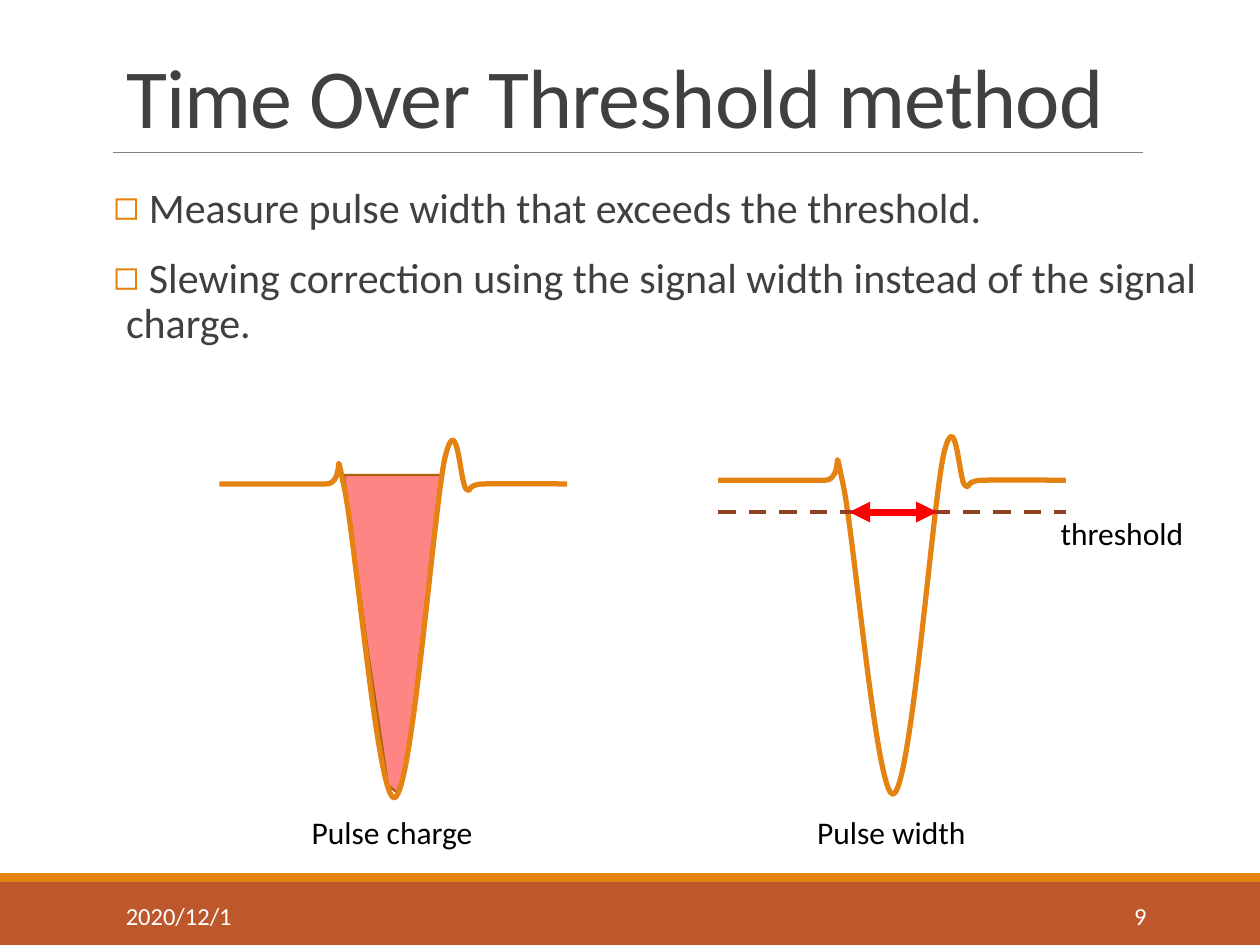
"""Build a slide that explains the time over threshold method."""
from lxml import etree
from pptx import Presentation
from pptx.dml.color import RGBColor
from pptx.enum.dml import MSO_LINE
from pptx.enum.shapes import MSO_CONNECTOR, MSO_SHAPE
from pptx.enum.text import MSO_ANCHOR, MSO_AUTO_SIZE, PP_ALIGN
from pptx.oxml.ns import qn
from pptx.util import Pt

STRAIGHT = MSO_CONNECTOR.STRAIGHT
RECTANGLE = MSO_SHAPE.RECTANGLE
DASH = MSO_LINE.DASH
TOP, MIDDLE, BOTTOM = MSO_ANCHOR.TOP, MSO_ANCHOR.MIDDLE, MSO_ANCHOR.BOTTOM
LEFT, RIGHT = PP_ALIGN.LEFT, PP_ALIGN.RIGHT
NO_FIT, GROW = MSO_AUTO_SIZE.NONE, MSO_AUTO_SIZE.SHAPE_TO_FIT_TEXT

ORANGE = RGBColor(0xE4, 0x83, 0x12)
RUST = RGBColor(0xBD, 0x58, 0x2C)
BROWN = RGBColor(0x8E, 0x42, 0x21)
OUTLINE = RGBColor(0xA9, 0x61, 0x0D)
RED = RGBColor(0xFF, 0x00, 0x00)
GRAY = RGBColor(0x80, 0x80, 0x80)
DARK = RGBColor(0x40, 0x40, 0x40)
BLACK = RGBColor(0x00, 0x00, 0x00)
WHITE = RGBColor(0xFF, 0xFF, 0xFF)

FONT = "Calibri"
BULLETS = (
    " Measure pulse width that exceeds the threshold.",
    " Slewing correction using the signal width instead of the signal charge.",
)
PULSE_WIDTH, PULSE_HEIGHT, PULSE_BASELINE = 198.7, 204.5, 24.6
PULSE_SEGMENTS = (
    ("a:moveTo", (0, 0)),
    ("a:lnTo", (60.5, 0)),
    ("a:cubicBezTo", (72.7, 0.7), (64.8, -28), (71.3, 1.8)),
    ("a:cubicBezTo", (77.8, 31.7), (90.7, 182.2), (100.1, 179.3)),
    ("a:cubicBezTo", (110.2, 176.4), (122.4, 14.4), (128.9, -15.1)),
    ("a:cubicBezTo", (136.1, -44.6), (137.5, 0.7), (141.1, 2.9)),
    ("a:cubicBezTo", (144.7, 5.4), (140.4, 0.4), (150.5, 0)),
    ("a:cubicBezTo", (159.8, -0.4), (198.7, 0), (198.7, 0)),
    ("a:lnTo", (198.7, 0)),
)
CHARGE_AREA = ((196.6, 271.4), (252, 271.4), (232.6, 437), (226.8, 452.9),
               (226.8, 452.9), (221.8, 448.6), (210.2, 371.5))


def apply(target, values):
    """Set each attribute of the target from a dict."""
    for name, value in values.items():
        setattr(target, name, value)


def format_line(line, color, width):
    """Give a line its colour and width."""
    line.color.rgb = color
    line.width = Pt(width)


def format_run(run, size, color):
    """Give a run its font, size and colour."""
    apply(run.font, {"name": FONT, "size": Pt(size)})
    run.font.color.rgb = color


def add_bar(slide, top, height, color):
    """Add a filled bar across the slide."""
    shape = slide.shapes.add_shape(RECTANGLE, 0, Pt(top), Pt(720), Pt(height))
    shape.shadow.inherit = False
    shape.fill.solid()
    shape.fill.fore_color.rgb = color
    shape.line.fill.background()


def add_line(slide, left, right, height, color, width):
    """Add a level line and return it."""
    connector = slide.shapes.add_connector(
        STRAIGHT, Pt(left), Pt(height), Pt(right), Pt(height))
    format_line(connector.line, color, width)
    etree.SubElement(connector.element.spPr, qn("a:effectLst"))
    return connector


def add_arrow_heads(connector):
    """Put a triangle on both ends of a connector."""
    line = connector.element.spPr.find(qn("a:ln"))
    for tag in ("a:headEnd", "a:tailEnd"):
        etree.SubElement(line, qn(tag), type="triangle")


def add_outline(slide, points, color, width, close=False):
    """Add an unfilled freeform through the points and return it."""
    start, *others = [(Pt(x), Pt(y)) for x, y in points]
    builder = slide.shapes.build_freeform(*start)
    builder.add_line_segments(others, close=close)
    shape = builder.convert_to_shape()
    shape.shadow.inherit = False
    shape.fill.background()
    format_line(shape.line, color, width)
    return shape


def add_pulse(slide, left, baseline):
    """Add the pulse as a freeform with curved segments."""
    top = baseline - PULSE_BASELINE
    corners = ((left, top), (left + PULSE_WIDTH, top + PULSE_HEIGHT))
    shape = add_outline(slide, corners, ORANGE, 3)
    outline = next(shape.element.iter(qn("a:path")))
    for segment in list(outline):
        outline.remove(segment)
    for tag, *points in PULSE_SEGMENTS:
        segment = etree.SubElement(outline, qn(tag))
        for x, y in points:
            etree.SubElement(segment, qn("a:pt"), x=str(Pt(x)),
                             y=str(Pt(y + PULSE_BASELINE)))


def add_charge_area(slide):
    """Add the translucent area that stands for the pulse charge."""
    shape = add_outline(slide, CHARGE_AREA, OUTLINE, 1.25, close=True)
    shape.fill.solid()
    shape.fill.fore_color.rgb = RED
    color = shape.element.spPr.find(qn("a:solidFill"))[0]
    etree.SubElement(color, qn("a:alpha"), val="48000")


def add_text(slide, box, text, size, color, alignment=LEFT, **frame_values):
    """Add a text box with one paragraph."""
    frame = slide.shapes.add_textbox(*map(Pt, box)).text_frame
    apply(frame, {"word_wrap": True, "auto_size": NO_FIT,
                  "vertical_anchor": TOP, **frame_values})
    paragraph = frame.paragraphs[0]
    paragraph.alignment = alignment
    run = paragraph.add_run()
    run.text = text
    format_run(run, size, color)


def add_title(slide, text):
    """Place and format the title placeholder."""
    title = slide.shapes.title
    apply(title, {"left": Pt(64.8), "top": Pt(22.7),
                  "width": Pt(594), "height": Pt(64.1)})
    apply(title.text_frame, {"text": text, "word_wrap": True,
                             "auto_size": NO_FIT, "vertical_anchor": BOTTOM})
    paragraph = title.text_frame.paragraphs[0]
    apply(paragraph, {"alignment": LEFT, "line_spacing": 0.85})
    run = paragraph.runs[0]
    format_run(run, 48, DARK)
    run.font._element.set("spc", "-48")


def add_bullets(slide, texts):
    """Add the bulleted text."""
    box = slide.shapes.add_textbox(Pt(64.8), Pt(103.4), Pt(620.6), Pt(362.2))
    frame = box.text_frame
    apply(frame, {"word_wrap": True, "auto_size": NO_FIT,
                  "margin_left": 0, "margin_right": 0})
    for index, text in enumerate(texts):
        paragraph = frame.add_paragraph() if index else frame.paragraphs[0]
        apply(paragraph, {"line_spacing": 0.9, "space_before": Pt(12),
                          "space_after": Pt(2)})
        run = paragraph.add_run()
        run.text = text
        format_run(run, 24, DARK)
        properties = paragraph._p.get_or_add_pPr()
        properties.set("marL", str(Pt(7.2)))
        properties.set("indent", str(Pt(-7.2)))
        bullet_color = etree.SubElement(properties, qn("a:buClr"))
        etree.SubElement(bullet_color, qn("a:srgbClr"), val=str(ORANGE))
        etree.SubElement(properties, qn("a:buFont"), typeface=FONT)
        etree.SubElement(properties, qn("a:buChar"), char="◻")


def main():
    """Build and save the slide."""
    presentation = Presentation()
    apply(presentation, {"slide_width": Pt(720), "slide_height": Pt(540)})
    slide = presentation.slides.add_slide(presentation.slide_layouts[5])

    add_bar(slide, 504, 36, RUST)
    add_bar(slide, 499, 5, ORANGE)
    add_line(slide, 64.8, 653, 87.1, GRAY, 0.5)
    add_title(slide, "Time Over Threshold method")
    add_pulse(slide, 410.4, 274.5)
    add_line(slide, 410.4, 609.1, 292.5, BROWN, 2.5).line.dash_style = DASH
    add_bullets(slide, BULLETS)
    add_charge_area(slide)
    add_pulse(slide, 125.4, 276.6)
    add_arrow_heads(add_line(slide, 485.3, 535.5, 292.6, RED, 4))

    add_text(slide, (599, 290.2, 97.2, 28.8), "threshold", 18, BLACK, auto_size=GROW)
    for left, width, text in ((171, 107.3, "Pulse charge"),
                              (459.8, 100.1, "Pulse width")):
        add_text(slide, (left, 460.8, width, 28.8), text, 18, BLACK,
                 word_wrap=False, auto_size=GROW)
    for left, width, text, alignment in ((64.8, 146.2, "2020/12/1", LEFT),
                                         (584.4, 77.8, "9", RIGHT)):
        add_text(slide, (left, 508.7, width, 28.8), text, 14, WHITE, alignment,
                 vertical_anchor=MIDDLE)
    presentation.save("out.pptx")


if __name__ == "__main__":
    main()
